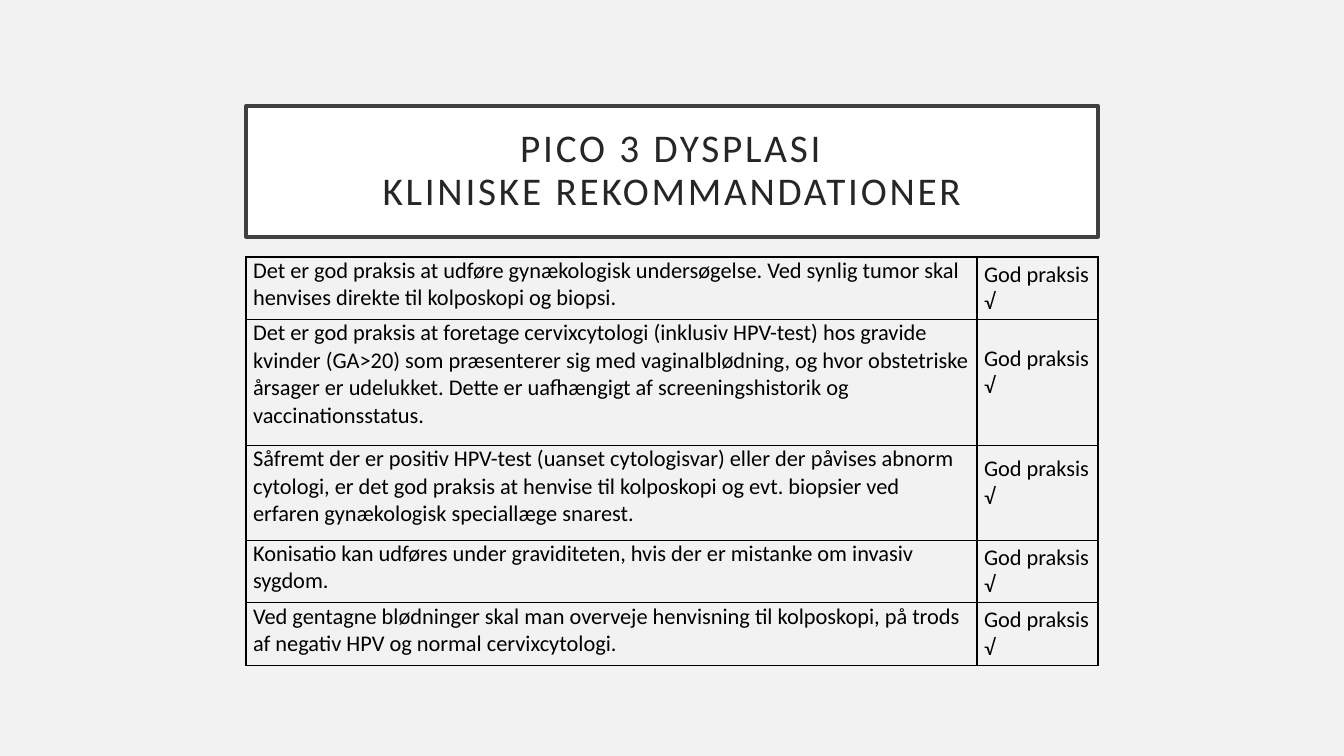
from lxml.etree import SubElement
from pptx import Presentation
from pptx.dml.color import RGBColor
from pptx.enum.text import MSO_ANCHOR, MSO_AUTO_SIZE, PP_ALIGN
from pptx.oxml.ns import qn
from pptx.util import Inches, Pt

BACKGROUND = RGBColor(0xF2, 0xF2, 0xF2)
WHITE = RGBColor(0xFF, 0xFF, 0xFF)
FRAME = RGBColor(0x40, 0x40, 0x40)
TITLE_INK = RGBColor(0x26, 0x26, 0x26)
BLACK = RGBColor(0, 0, 0)

FONT = "Calibri"
LEFT, WIDTH = 2.44, 8.45
COLUMN_WIDTHS = [7.25, 1.2]
GRADE = "God praksis √"

# Recommendation, row height, space below the grade
RECOMMENDATIONS = [
    ("Det er god praksis at udføre gynækologisk undersøgelse. Ved synlig tumor skal "
     "henvises direkte til kolposkopi og biopsi.", 0.62, 0),
    ("Det er god praksis at foretage cervixcytologi (inklusiv HPV-test) hos gravide "
     "kvinder (GA>20) som præsenterer sig med vaginalblødning, og hvor obstetriske "
     "årsager er udelukket. Dette er uafhængigt af screeningshistorik og "
     "vaccinationsstatus.", 1.25, 0.2),
    ("Såfremt der er positiv HPV-test (uanset cytologisvar) eller der påvises abnorm "
     "cytologi, er det god praksis at henvise til kolposkopi og evt. biopsier ved "
     "erfaren gynækologisk speciallæge snarest.", 0.94, 0.2),
    ("Konisatio kan udføres under graviditeten, hvis der er mistanke om invasiv "
     "sygdom.", 0.62, 0),
    ("Ved gentagne blødninger skal man overveje henvisning til kolposkopi, på trods "
     "af negativ HPV og normal cervixcytologi.", 0.62, 0),
]


def set_font(para, size, color):
    para.font.name = FONT
    para.font.size = Pt(size)
    para.font.color.rgb = color


def format_title(title):
    title.left, title.top = Inches(LEFT), Inches(1.05)
    title.width, title.height = Inches(WIDTH), Inches(1.3)
    title.fill.solid()
    title.fill.fore_color.rgb = WHITE
    title.line.color.rgb = FRAME
    title.line.width = Pt(2.5)
    frame = title.text_frame
    frame.text = "PICO 3 DYSPLASI\vKLINISKE REKOMMANDATIONER"
    frame.word_wrap = True
    frame.auto_size = MSO_AUTO_SIZE.NONE
    frame.vertical_anchor = MSO_ANCHOR.MIDDLE
    frame.margin_left = frame.margin_right = Inches(0.2)
    frame.margin_top = frame.margin_bottom = Inches(0.2)
    para = frame.paragraphs[0]
    para.alignment = PP_ALIGN.CENTER
    para.line_spacing = 0.9
    set_font(para, 28, TITLE_INK)
    for span in para.runs:
        span._r.get_or_add_rPr().set("spc", "200")


def add_borders(cell):
    properties = cell._tc.get_or_add_tcPr()
    for side in ("a:lnL", "a:lnR", "a:lnT", "a:lnB"):
        line = SubElement(properties, qn(side), w=str(Pt(1)))
        fill = SubElement(line, qn("a:solidFill"))
        SubElement(fill, qn("a:srgbClr"), val=str(BLACK))


def fill_cell(cell, text, anchor, space_below=0):
    cell.text = text
    cell.vertical_anchor = anchor
    cell.margin_left = cell.margin_right = Inches(0.07)
    cell.margin_top = 0
    cell.margin_bottom = Inches(space_below)
    set_font(cell.text_frame.paragraphs[0], 16, BLACK)
    add_borders(cell)  # borders must precede the fill in the cell properties
    cell.fill.background()


def add_recommendations(page):
    height = sum(row_height for _, row_height, _ in RECOMMENDATIONS)
    table = page.shapes.add_table(
        len(RECOMMENDATIONS), len(COLUMN_WIDTHS),
        Inches(LEFT), Inches(2.55), Inches(WIDTH), Inches(height)).table
    table.first_row = table.horz_banding = False
    for column, width in zip(table.columns, COLUMN_WIDTHS):
        column.width = Inches(width)
    for row, (text, row_height, space_below) in zip(table.rows, RECOMMENDATIONS):
        row.height = Inches(row_height)
        advice, grade = row.cells
        fill_cell(advice, text, MSO_ANCHOR.TOP)
        fill_cell(grade, GRADE, MSO_ANCHOR.MIDDLE, space_below)


def main():
    deck = Presentation()
    deck.slide_width, deck.slide_height = Inches(13.33), Inches(7.5)
    page = deck.slides.add_slide(deck.slide_layouts.get_by_name("Title Only"))
    page.background.fill.solid()
    page.background.fill.fore_color.rgb = BACKGROUND
    format_title(page.shapes.title)
    add_recommendations(page)
    deck.save("out.pptx")


if __name__ == "__main__":
    main()
